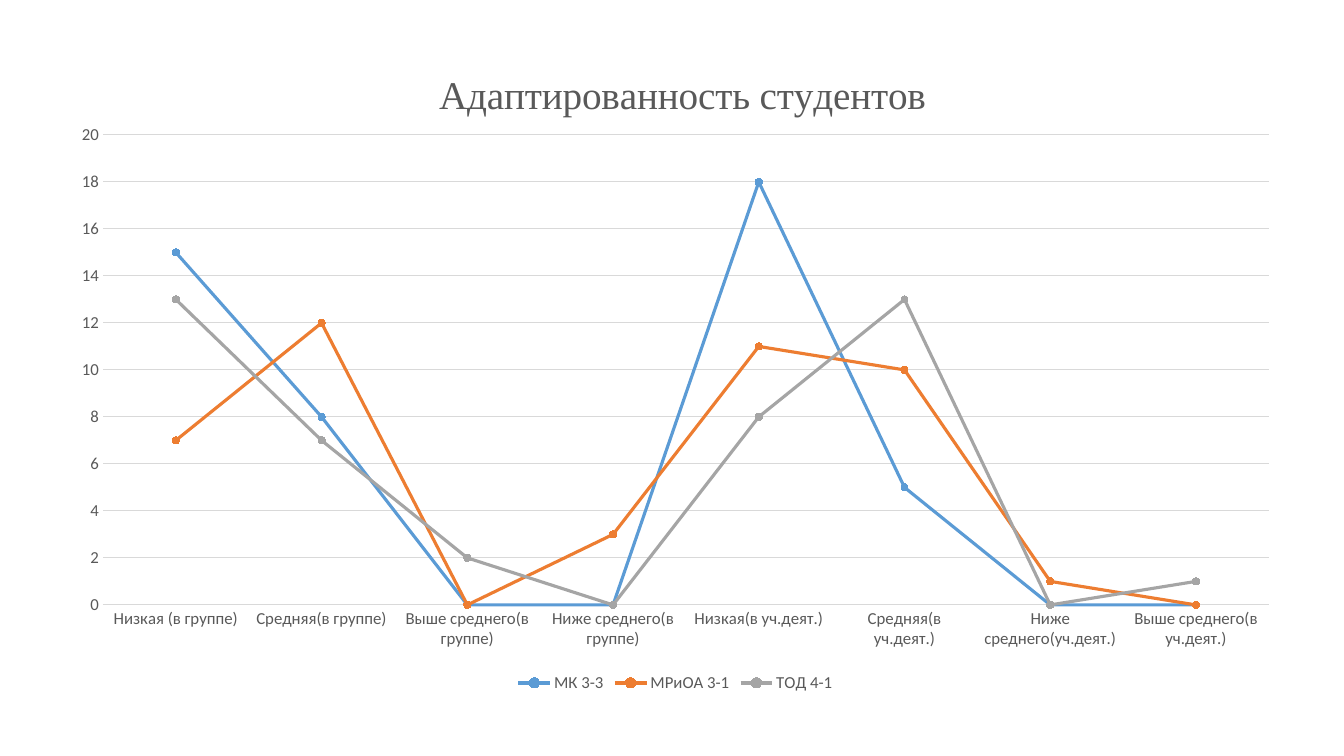
from pptx import Presentation, util as u
from pptx.chart.data import CategoryChartData
from pptx.dml.color import RGBColor
from pptx.enum import chart as kinds
from pptx.oxml import parse_xml
from pptx.oxml.ns import nsdecls, qn

PX = 914400 / 100.8
COLORS = {
    "text": "595959", "grid": "D9D9D9",
    "МК 3-3": "5B9BD5", "МРиОА 3-1": "ED7D31", "ТОД 4-1": "A5A5A5",
}
LEVELS = [
    "Низкая (в группе)", "Средняя(в группе)",
    "Выше среднего(в группе)", "Ниже среднего(в группе)",
    "Низкая(в уч.деят.)", "Средняя(в уч.деят.)",
    "Ниже среднего(уч.деят.)", "Выше среднего(в уч.деят.)",
]
GROUPS = {
    "МК 3-3": [15, 8, 0, 0, 18, 5, 0, 0],
    "МРиОА 3-1": [7, 12, 0, 3, 11, 10, 1, 0],
    "ТОД 4-1": [13, 7, 2, 0, 8, 13, 0, 1],
}


def px(length):
    return u.Emu(round(length * PX))


def color(name):
    return RGBColor.from_string(COLORS[name])


def style_font(font, size=12, name="Calibri"):
    font.size = u.Pt(size)
    font.name = name
    font.bold = False
    font.color.rgb = color("text")


def style_line(line, name, width):
    line.color.rgb = color(name)
    line.width = u.Pt(width)


def write_text(frame, words, **style):
    span = frame.paragraphs[0].add_run()
    span.text = words
    style_font(span.font, **style)


def place(element, index, target="", **shares):
    for old in element.findall(qn("c:layout")):
        element.remove(old)
    modes = "".join(f'<c:{key}Mode val="edge"/>' for key in "xy")
    sizes = "".join(f'<c:{key} val="{share:.4f}"/>' for key, share in shares.items())
    element.insert(index, parse_xml(
        f'<c:layout {nsdecls("c")}><c:manualLayout>{target}{modes}{sizes}'
        '</c:manualLayout></c:layout>'))


def style_axes(chart):
    for axis in (chart.category_axis, chart.value_axis):
        axis.major_tick_mark = axis.minor_tick_mark = kinds.XL_TICK_MARK.NONE
        style_font(axis.tick_labels.font)
    style_line(chart.category_axis.format.line, "grid", 0.75)
    values = chart.value_axis
    values.minimum_scale, values.maximum_scale, values.major_unit = 0, 20, 2
    values.format.line.fill.background()
    values.has_major_gridlines = True
    style_line(values.major_gridlines.format.line, "grid", 0.75)


def style_series(chart):
    chart.plots[0].vary_by_categories = False
    for series in chart.plots[0].series:
        series.smooth = False
        style_line(series.format.line, series.name, 2.25)
        marker = series.marker
        marker.style = kinds.XL_MARKER_STYLE.CIRCLE
        marker.size = 5
        marker.format.fill.solid()
        marker.format.fill.fore_color.rgb = color(series.name)
        style_line(marker.format.line, series.name, 0.75)


def adaptation_chart(page, left, top, width, height):
    data = CategoryChartData(number_format="General")
    data.categories = LEVELS
    for name, counts in GROUPS.items():
        data.add_series(name, counts)
    box = (px(length) for length in (left, top, width, height))
    chart = page.shapes.add_chart(kinds.XL_CHART_TYPE.LINE_MARKERS, *box, data).chart
    style_font(chart.font)

    chart.has_title = True
    write_text(chart.chart_title.text_frame, "Адаптированность студентов",
               size=28, name="Times New Roman")
    place(chart.element.xpath("c:chart/c:title")[0], 1,
          x=375 / width, y=23 / height)
    place(chart.element.xpath("c:chart/c:plotArea")[0], 0,
          target='<c:layoutTarget val="inner"/>',
          x=46 / width, y=95 / height, w=1166 / width, h=470 / height)

    chart.has_legend = True
    chart.legend.position = kinds.XL_LEGEND_POSITION.BOTTOM
    chart.legend.include_in_layout = False
    style_font(chart.legend.font)
    style_axes(chart)
    style_series(chart)


def main():
    deck = Presentation()
    deck.slide_width, deck.slide_height = px(1344), px(756)
    page = deck.slides.add_slide(deck.slide_layouts[6])
    adaptation_chart(page, 57, 40, 1237, 657)
    deck.save("out.pptx")


if __name__ == "__main__":
    main()
